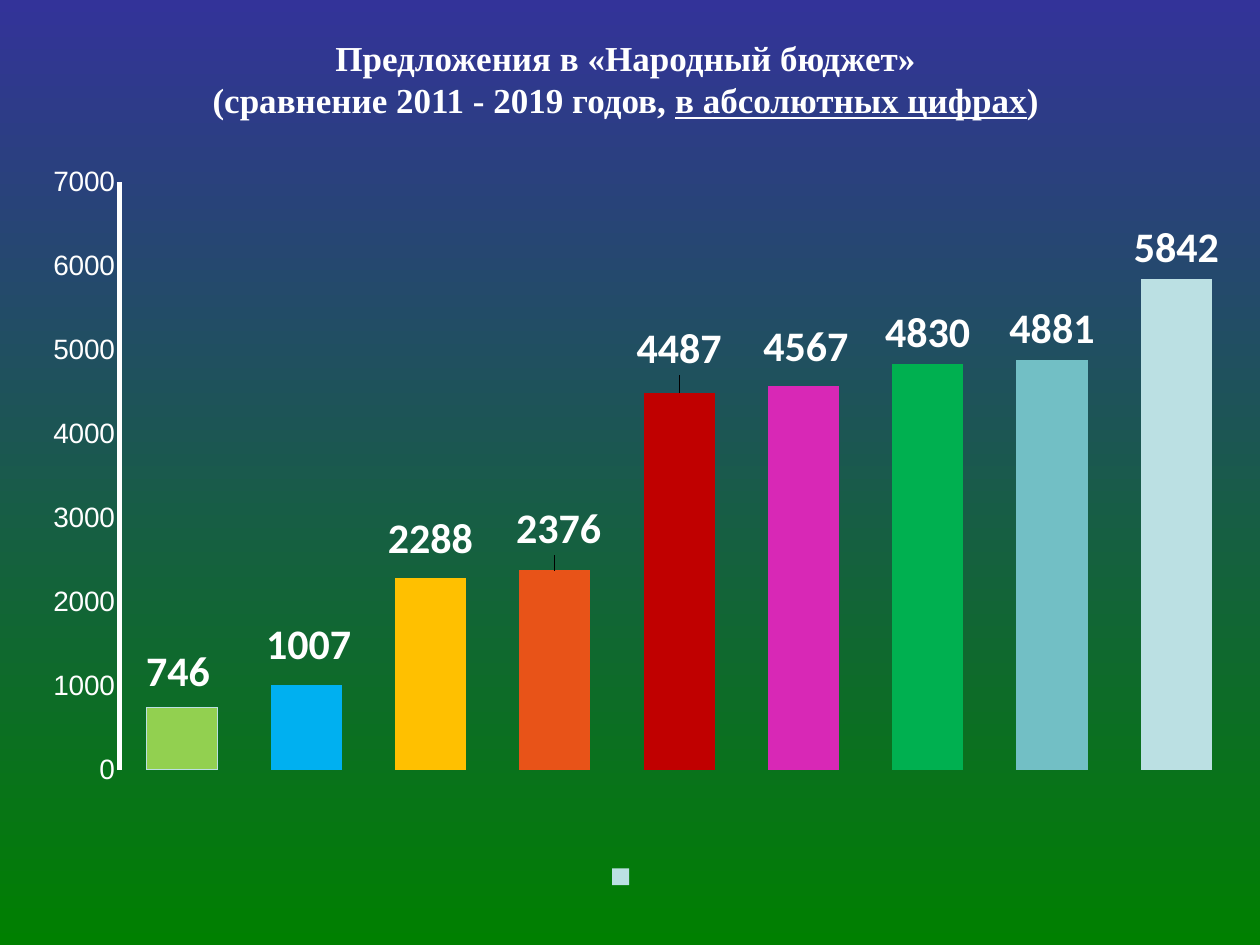
from lxml import etree
from pptx import Presentation
from pptx.chart.data import CategoryChartData
from pptx.dml.color import RGBColor
from pptx.enum import chart as charts, text
from pptx.oxml import ns
from pptx.util import Inches, Pt

WHITE = RGBColor(0xFF, 0xFF, 0xFF)
BACKGROUND = [RGBColor(0x33, 0x33, 0x99), RGBColor(0x00, 0x80, 0x00)]
PALE_BLUE = RGBColor(0xBB, 0xE0, 0xE3)

TITLE_FIRST_LINE = "Предложения в «Народный бюджет»"
TITLE_SECOND_LINE = [
    ("(сравнение 2011 - 2019 годов, ", False),
    ("в абсолютных цифрах", True),
    (")", False),
]
# Proposals per year and bar colour
BARS = [
    (746, RGBColor(0x92, 0xD0, 0x50)),
    (1007, RGBColor(0x00, 0xB0, 0xF0)),
    (2288, RGBColor(0xFF, 0xC0, 0x00)),
    (2376, RGBColor(0xE8, 0x53, 0x18)),
    (4487, RGBColor(0xC0, 0x00, 0x00)),
    (4567, RGBColor(0xD8, 0x28, 0xB6)),
    (4830, RGBColor(0x00, 0xB0, 0x50)),
    (4881, RGBColor(0x72, 0xBF, 0xC5)),
    (5842, PALE_BLUE),
]
# Label shifts (x, y) in inches for the first bars
LABEL_SHIFTS = [(-0.03, -0.03), (0.02, -0.07), (0, -0.06), (0.03, -0.08), (0, -0.1), (0.02, -0.06)]
CHART_WIDTH, CHART_HEIGHT = 10, 5.91
PLOT = {"x": 0.095, "y": 0.036, "w": 0.888, "h": 0.79}


def style_font(font, name, size, bold=False):
    font.name, font.size, font.bold = name, Pt(size), bold
    font.color.rgb = WHITE


def manual_layout(**values):
    """Return a c:layout element with the given manualLayout values."""
    layout = etree.Element(ns.qn("c:layout"))
    manual = etree.SubElement(layout, ns.qn("c:manualLayout"))
    for tag, value in values.items():
        etree.SubElement(manual, ns.qn(f"c:{tag}")).set("val", str(value))
    return layout


def add_title(slide):
    title = slide.shapes.title
    title.left, title.top, title.width, title.height = map(Inches, (0.2, 0, 9.53, 1.25))
    title.text_frame.vertical_anchor = text.MSO_ANCHOR.MIDDLE
    paragraph = title.text_frame.paragraphs[0]
    paragraph.alignment = text.PP_ALIGN.CENTER
    style_font(paragraph.font, "Times New Roman", 20, True)
    paragraph.add_run().text = TITLE_FIRST_LINE
    paragraph.add_line_break()
    for words, underlined in TITLE_SECOND_LINE:
        run = paragraph.add_run()
        run.text = words
        run.font.underline = underlined
    for run in paragraph.runs:
        style_font(run.font, "Times New Roman", 20, True)


def add_budget_chart(slide):
    data = CategoryChartData()
    data.categories = [str(number) for number in range(1, len(BARS) + 1)]
    data.add_series("  ", [value for value, _ in BARS])
    chart = slide.shapes.add_chart(
        charts.XL_CHART_TYPE.COLUMN_CLUSTERED, 0, Inches(1.23),
        Inches(CHART_WIDTH), Inches(CHART_HEIGHT), data).chart
    chart.has_title = False
    chart.font.name, chart.font.size = "Arial", Pt(18)
    chart.has_legend = True
    chart.legend.position = charts.XL_LEGEND_POSITION.BOTTOM
    chart.legend.include_in_layout = False
    style_font(chart.legend.font, "Calibri", 16, True)

    chart.category_axis.visible = False
    axis = chart.value_axis
    axis.minimum_scale, axis.maximum_scale, axis.major_unit = 0, 7000, 1000
    axis.has_major_gridlines = False
    axis.major_tick_mark = charts.XL_TICK_MARK.NONE
    style_font(axis.tick_labels.font, "Arial", 16)
    axis.format.line.color.rgb = WHITE
    axis.format.line.width = Pt(3)

    plot = chart.plots[0]
    plot.gap_width = 75
    plot.vary_by_categories = False
    series = plot.series[0]
    series.format.fill.solid()
    series.format.fill.fore_color.rgb = PALE_BLUE
    for index, (_, color) in enumerate(BARS):
        fill = series.points[index].format.fill
        fill.solid()
        fill.fore_color.rgb = color
    series.points[0].format.line.color.rgb = PALE_BLUE

    labels = series.data_labels
    labels.show_value = True
    labels.position = charts.XL_LABEL_POSITION.OUTSIDE_END
    style_font(labels.font, "Calibri", 24, True)
    for index, (x, y) in enumerate(LABEL_SHIFTS):
        label = series.points[index].data_label
        style_font(label.font, "Calibri", 24, True)
        label.position = charts.XL_LABEL_POSITION.OUTSIDE_END
    shifted = series._element.findall(".//" + ns.qn("c:dLbl"))
    for element, (x, y) in zip(shifted, LABEL_SHIFTS):
        shift = manual_layout(x=round(x / CHART_WIDTH, 4), y=round(y / CHART_HEIGHT, 4))
        element.find(ns.qn("c:idx")).addnext(shift)

    plot_area = chart._chartSpace.chart.plotArea
    for layout in plot_area.findall(ns.qn("c:layout")):
        plot_area.remove(layout)
    plot_area.insert(0, manual_layout(layoutTarget="inner", xMode="edge", yMode="edge", **PLOT))


def main():
    presentation = Presentation()
    presentation.slide_width, presentation.slide_height = Inches(10), Inches(7.5)
    slide = presentation.slides.add_slide(presentation.slide_layouts[5])
    fill = slide.background.fill
    fill.gradient()
    fill.gradient_angle = 270
    for stop, color in zip(fill.gradient_stops, BACKGROUND):
        stop.color.rgb = color
    add_title(slide)
    add_budget_chart(slide)
    presentation.save("out.pptx")


if __name__ == "__main__":
    main()
